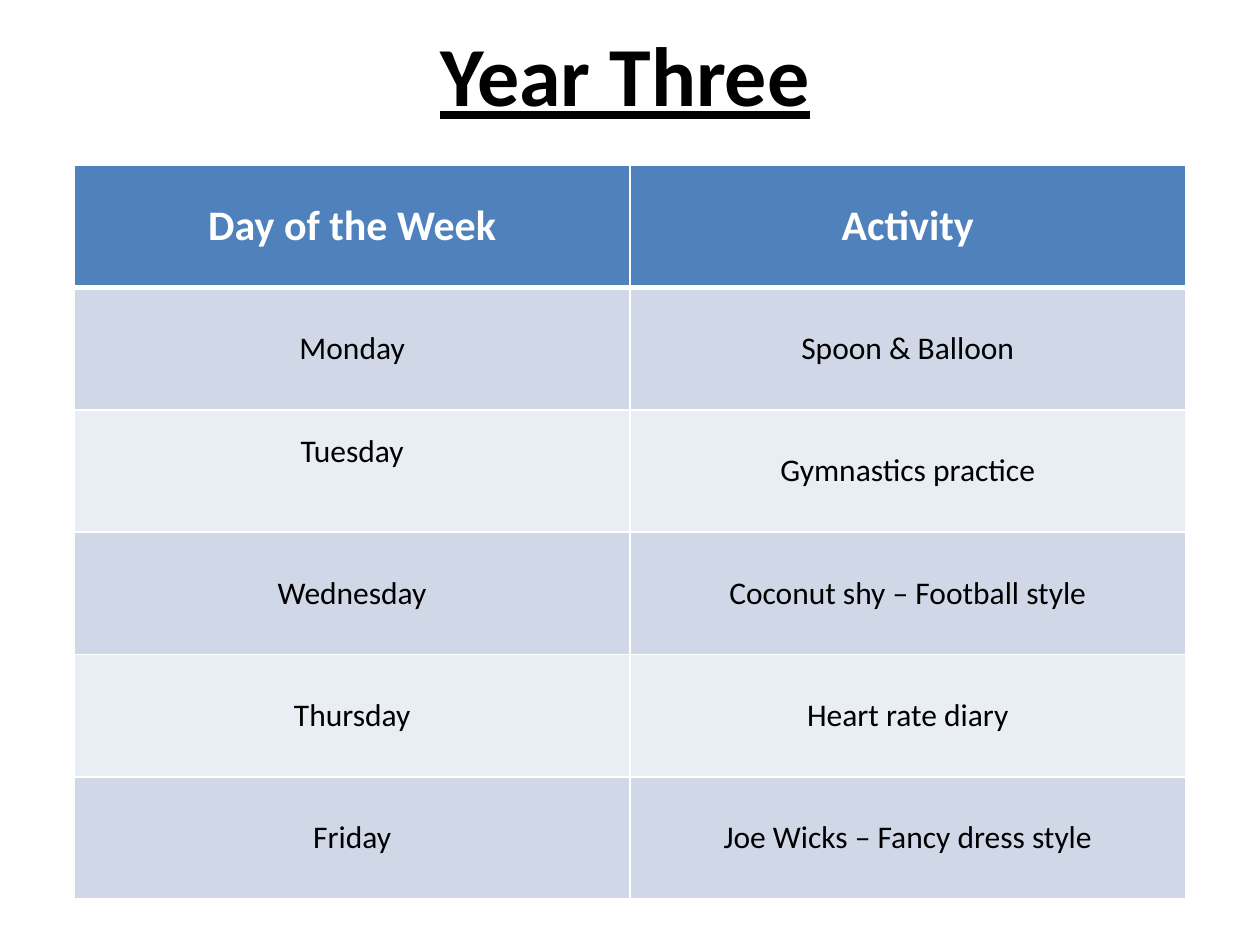
import pptx
import pptx.dml.color
import pptx.enum.text
import pptx.oxml
import pptx.oxml.ns
import pptx.util

FONT = "Calibri"
TIMETABLE = [
    ("Day of the Week", "Activity"),
    ("Monday", "Spoon & Balloon"),
    ("Tuesday", "Gymnastics practice"),
    ("Wednesday", "Coconut shy – Football style"),
    ("Thursday", "Heart rate diary"),
    ("Friday", "Joe Wicks – Fancy dress style"),
]


def colour(value):
    """Turn a hex string into a colour."""
    return pptx.dml.color.RGBColor.from_string(value)


def write(frame, text, size, ink, bold, underline=False):
    """Put one centred run of text in a frame."""
    para = frame.paragraphs[0]
    para.alignment = pptx.enum.text.PP_ALIGN.CENTER
    span = para.add_run()
    span.text = text
    span.font.name = FONT
    span.font.size = pptx.util.Pt(size)
    span.font.bold = bold
    span.font.underline = underline
    span.font.color.rgb = colour(ink)


def add_borders(cell, widths):
    """Draw white cell borders, with widths in points for each side."""
    properties = cell._tc.get_or_add_tcPr()
    for side, width in widths.items():
        properties.append(pptx.oxml.parse_xml(
            f'<a:ln{side} {pptx.oxml.ns.nsdecls("a")} w="{pptx.util.Pt(width)}">'
            f'<a:solidFill><a:srgbClr val="FFFFFF"/></a:solidFill></a:ln{side}>'
        ))


def place_title(page, left, top, width, height):
    """Place the underlined heading in the given box."""
    box = page.shapes.title
    box.left, box.top, box.width, box.height = left, top, width, height
    frame = box.text_frame
    frame.word_wrap = True
    frame.vertical_anchor = pptx.enum.text.MSO_ANCHOR.TOP
    write(frame, "Year Three", 48, "000000", True, True)


def place_timetable(page, left, top, width, height):
    """Place the banded table of days and activities in the given box."""
    table = page.shapes.add_table(
        len(TIMETABLE), len(TIMETABLE[0]), left, top, width, height
    ).table
    for index, entries in enumerate(TIMETABLE):
        header = index == 0
        band = "4F81BD" if header else ("E9EDF4", "D0D8E8")[index % 2]
        widths = {"L": 1, "R": 1, "T": 3 if index == 1 else 1, "B": 3 if header else 1}
        for column, text in enumerate(entries):
            cell = table.cell(index, column)
            cell.vertical_anchor = pptx.enum.text.MSO_ANCHOR.MIDDLE
            add_borders(cell, widths)
            cell.fill.solid()
            cell.fill.fore_color.rgb = colour(band)
            if header:
                write(cell.text_frame, text, 24, "FFFFFF", True)
            else:
                write(cell.text_frame, text, 18, "000000", False)
            if text == "Tuesday":
                cell.margin_bottom = pptx.util.Cm(0.9)


def main():
    """Build and save the deck."""
    cm = pptx.util.Cm
    deck = pptx.Presentation()
    deck.slide_width, deck.slide_height = cm(25.4), cm(19.05)
    page = deck.slides.add_slide(deck.slide_layouts[5])
    place_timetable(page, cm(1.5), cm(3.33), cm(22.4), cm(14.8))
    place_title(page, cm(1.7), cm(0.33), cm(21.8), cm(2.31))
    deck.save("out.pptx")


if __name__ == "__main__":
    main()
